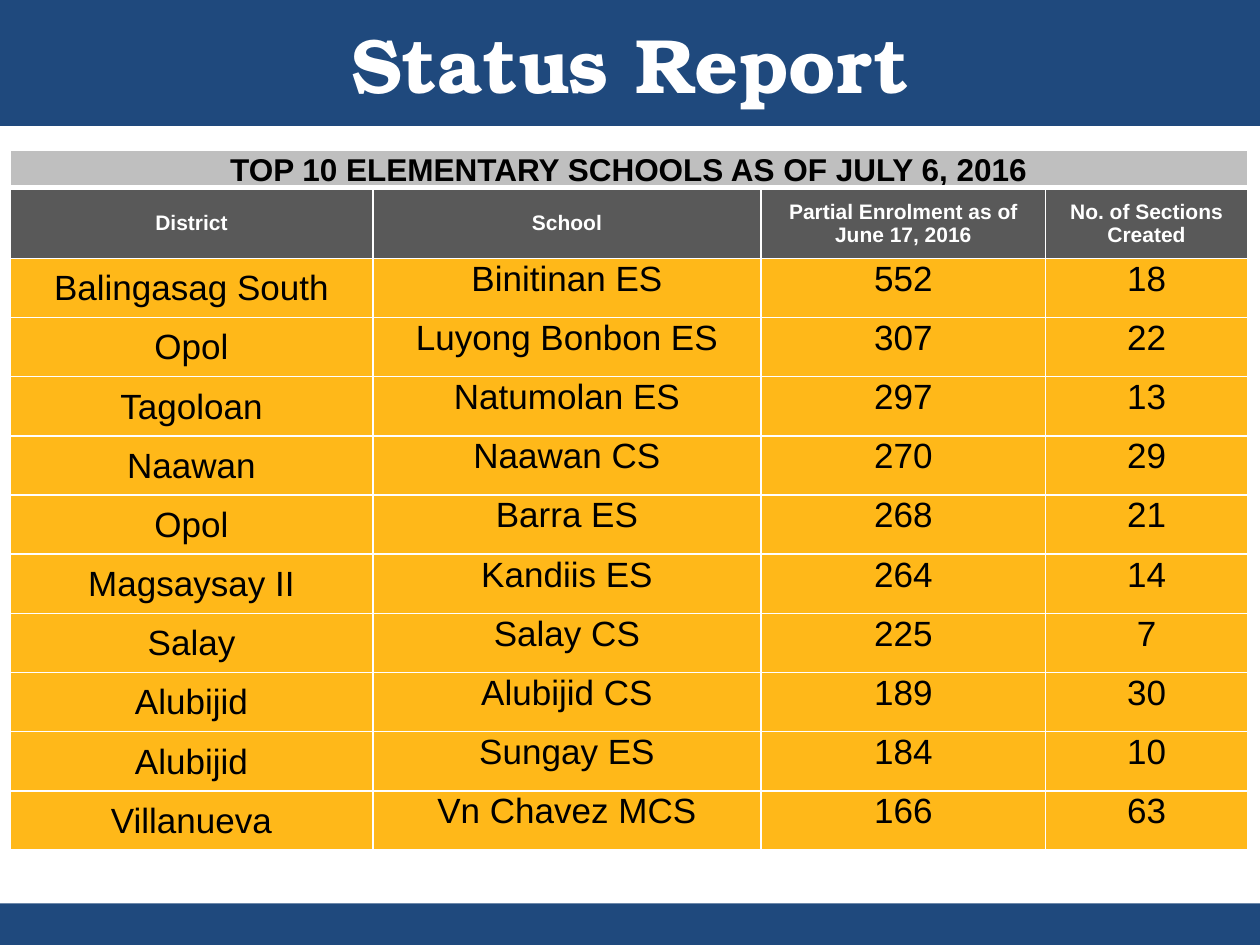
from lxml import etree
from pptx import Presentation
from pptx import util as u
from pptx.dml.color import RGBColor
from pptx.enum import shapes, text
from pptx.oxml import ns

NAVY, WHITE, BLACK = "1F497D", "FFFFFF", "000000"
SILVER, CHARCOAL, AMBER = "BFBFBF", "595959", "FFB819"

CAPTION = "TOP 10 ELEMENTARY SCHOOLS AS OF JULY 6, 2016"
HEADINGS = ("District", "School", "Partial Enrolment as of June 17, 2016",
            "No. of Sections Created")
SCHOOLS = (
    ("Balingasag South", "Binitinan ES", 552, 18),
    ("Opol", "Luyong Bonbon ES", 307, 22),
    ("Tagoloan", "Natumolan ES", 297, 13),
    ("Naawan", "Naawan CS", 270, 29),
    ("Opol", "Barra ES", 268, 21),
    ("Magsaysay II", "Kandiis ES", 264, 14),
    ("Salay", "Salay CS", 225, 7),
    ("Alubijid", "Alubijid CS", 189, 30),
    ("Alubijid", "Sungay ES", 184, 10),
    ("Villanueva", "Vn Chavez MCS", 166, 63),
)
COLUMN_WIDTHS = (2.88, 3.08, 2.26, 1.6)
CAPTION_HEIGHT, HEADING_HEIGHT, SCHOOL_HEIGHT = 0.28, 0.56, 0.47


def color(value):
    return RGBColor.from_string(value)


def write(frame, content, *, size, ink=BLACK, font="Arial", bold=False, spacing=None):
    """Put one centred paragraph into a text frame."""
    para = frame.paragraphs[0]
    para.alignment = text.PP_ALIGN.CENTER
    para.line_spacing = spacing
    span = para.add_run()
    span.text = str(content)
    span.font.name = font
    span.font.size = u.Pt(size)
    span.font.bold = bold
    span.font.color.rgb = color(ink)


def set_borders(cell, top=1, bottom=1):
    """Draw white edges around a cell; call before filling it."""
    properties = cell._tc.get_or_add_tcPr()
    for side, width in (("L", 1), ("R", 1), ("T", top), ("B", bottom)):
        line = etree.SubElement(properties, ns.qn(f"a:ln{side}"), w=str(u.Pt(width)))
        fill = etree.SubElement(line, ns.qn("a:solidFill"))
        etree.SubElement(fill, ns.qn("a:srgbClr"), val=WHITE)


class ReportSlide:
    def __init__(self, deck):
        self.slide = deck.slides.add_slide(deck.slide_layouts[5])

    def band(self, top, height):
        box = self.slide.shapes.add_shape(
            shapes.MSO_SHAPE.RECTANGLE, 0, u.Inches(top), u.Inches(10), u.Inches(height))
        box.shadow.inherit = False
        box.fill.solid()
        box.fill.fore_color.rgb = color(NAVY)
        box.line.fill.background()

    def title(self, content):
        box = self.slide.shapes.title
        box.left, box.top = 0, 0
        box.width, box.height = u.Inches(10), u.Inches(1)
        box.text_frame.vertical_anchor = text.MSO_ANCHOR.MIDDLE
        write(box.text_frame, content, size=44, ink=WHITE, font="TeX Gyre Bonum", bold=True)
        self.slide.shapes._spTree.append(box._element)  # in front of the bands

    def cell(self, cell, content, fill, *, middle=True, side=0.01, above=0.01,
             top=1, bottom=1, **style):
        set_borders(cell, top, bottom)
        cell.fill.solid()
        cell.fill.fore_color.rgb = color(fill)
        cell.margin_left = cell.margin_right = u.Inches(side)
        cell.margin_top, cell.margin_bottom = u.Inches(above), 0
        cell.vertical_anchor = text.MSO_ANCHOR.MIDDLE if middle else text.MSO_ANCHOR.TOP
        if content is not None:
            write(cell.text_frame, content, **style)

    def school_table(self, left, top):
        heights = [CAPTION_HEIGHT, HEADING_HEIGHT] + [SCHOOL_HEIGHT] * len(SCHOOLS)
        table = self.slide.shapes.add_table(
            len(heights), len(COLUMN_WIDTHS), u.Inches(left), u.Inches(top),
            u.Inches(sum(COLUMN_WIDTHS)), u.Inches(sum(heights))).table
        for column, width in zip(table.columns, COLUMN_WIDTHS):
            column.width = u.Inches(width)
        for row, height in zip(table.rows, heights):
            row.height = u.Inches(height)

        table.cell(0, 0).merge(table.cell(0, len(COLUMN_WIDTHS) - 1))
        for index, heading in enumerate(HEADINGS):
            self.cell(table.cell(0, index), None if index else CAPTION, SILVER,
                      side=0.07, above=0, bottom=3, size=18, bold=True, spacing=1.07)
            self.cell(table.cell(1, index), heading, CHARCOAL, top=3,
                      size=12, ink=WHITE, bold=True)
        for row, school in enumerate(SCHOOLS, start=2):
            for index, value in enumerate(school):
                self.cell(table.cell(row, index), value, AMBER, middle=index == 0, size=20)


def main():
    deck = Presentation()
    deck.slide_width, deck.slide_height = u.Inches(10), u.Inches(7.5)
    page = ReportSlide(deck)
    page.band(7.17, 0.33)
    page.band(0, 1)
    page.title("Status Report")
    page.school_table(0.08, 1.19)
    deck.save("out.pptx")


if __name__ == "__main__":
    main()
